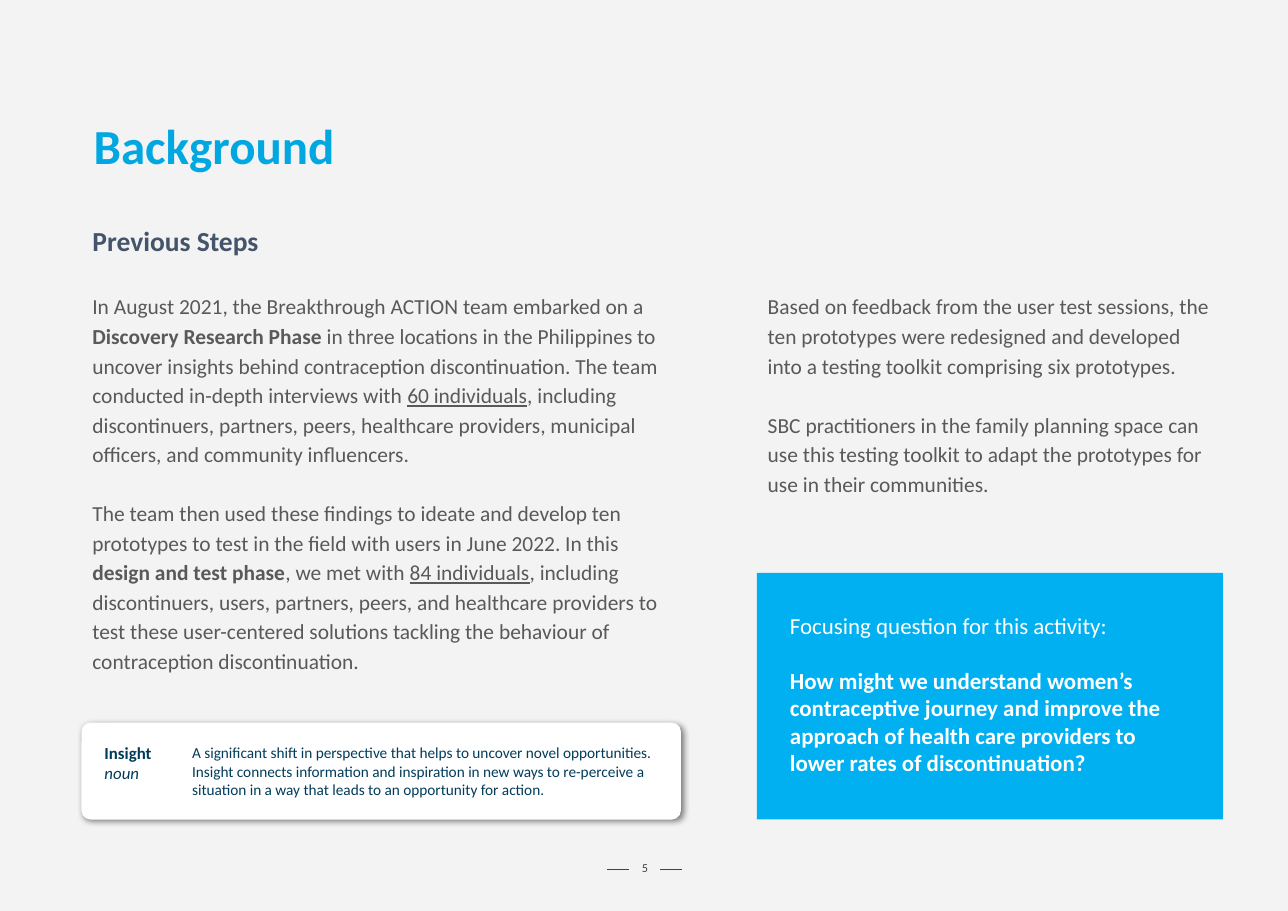
from lxml import etree
from pptx import Presentation
from pptx.dml.color import RGBColor
from pptx.enum.shapes import MSO_CONNECTOR, MSO_SHAPE
from pptx.enum.text import MSO_ANCHOR, PP_ALIGN
from pptx.oxml import parse_xml
from pptx.oxml.ns import nsdecls, qn
from pptx.util import Inches, Pt

LINE = MSO_CONNECTOR.STRAIGHT
RECT, ROUND = MSO_SHAPE.RECTANGLE, MSO_SHAPE.ROUNDED_RECTANGLE
TOP, MID = MSO_ANCHOR.TOP, MSO_ANCHOR.MIDDLE
LEFT, MIDDLE = PP_ALIGN.LEFT, PP_ALIGN.CENTER

COLORS = {
    "back": "F3F3F3", "title": "00A7E1", "head": "44546A", "body": "595959",
    "card": "FFFFFF", "navy": "023C5A", "term": "003C5A",
    "panel": "00B0F0", "white": "FFFFFF", "foot": "434343",
}
WIDE, HIGH = 11.69, 8.27
# Two columns (left, width) and the shared row edges, in inches
COL1, COL2 = (0.74, 5.44), (6.87, 4.23)
BODY, BASE = 2.53, 7.44


def color(name):
    return RGBColor.from_string(COLORS[name])


def write(shape, paras, size, ink, pad=(0.1, 0.1, 0.1, 0.1), anchor=TOP,
          align=LEFT, lines=None, gap=0):
    """Fill a shape with paragraphs, each a list of (text, style letters b, i, u)."""
    frame = shape.text_frame
    frame.word_wrap = True
    frame.vertical_anchor = anchor
    (frame.margin_left, frame.margin_top,
     frame.margin_right, frame.margin_bottom) = map(Inches, pad)
    for n, parts in enumerate(paras):
        para = frame.add_paragraph() if n else frame.paragraphs[0]
        para.alignment = align
        para.line_spacing = lines
        if n and gap:
            para.space_before = Pt(gap)
        for text, style in parts:
            run = para.add_run()
            run.text = text
            font = run.font
            font.name, font.size = "Calibri", Pt(size)
            font.color.rgb = color(ink)
            font.bold, font.italic = "b" in style, "i" in style
            font.underline = "u" in style


deck = Presentation()
deck.slide_width, deck.slide_height = Inches(WIDE), Inches(HIGH)
slide = deck.slides.add_slide(deck.slide_layouts[6])
slide.background.fill.solid()
slide.background.fill.fore_color.rgb = color("back")
shapes = slide.shapes

# Page number between two short rules
foot = shapes.add_textbox(*map(Inches, (5.68, 7.76, 0.35, 0.26)))
write(foot, [[("5", "")]], 8, "foot", anchor=MID, align=MIDDLE, lines=0.8)
for x in (5.51, 5.99):
    rule = shapes.add_connector(LINE, *map(Inches, (x, 7.89, x + 0.2, 7.89)))
    rule.line.color.rgb = color("foot")
    rule.line.width = Pt(0.75)
    etree.SubElement(rule._element.spPr, qn("a:effectLst"))

# Headings
title = shapes.add_textbox(*map(Inches, (COL1[0], 0.83, 10.21, 1.06)))
write(title, [[("Background", "b")]], 32, "title",
      pad=(0.11, 0.06, 0.11, 0.06), anchor=MID, lines=0.86)
head = shapes.add_textbox(*map(Inches, (COL1[0], 1.93, 5.38, 0.52)))
write(head, [[("Previous Steps", "b")]], 18, "head")

# Body columns
steps = [
    [("In August 2021, the Breakthrough ACTION team embarked on a ", ""),
     ("Discovery Research Phase", "b"),
     (" in three locations in the Philippines to uncover insights behind "
      "contraception discontinuation. The team conducted in-depth interviews with ", ""),
     ("60 individuals", "u"),
     (", including discontinuers, partners, peers, healthcare providers, "
      "municipal officers, and community influencers.", "")],
    [("The team then used these findings to ideate and develop ten prototypes "
      "to test in the field with users in June 2022. In this ", ""),
     ("design and test phase", "b"),
     (", we met with ", ""),
     ("84 individuals", "u"),
     (", including discontinuers, users, partners, peers, and healthcare "
      "providers to test these user-centered solutions tackling the behaviour "
      "of contraception discontinuation.", "")],
]
uses = [
    [("Based on feedback from the user test sessions, the ten prototypes were "
      "redesigned and developed into a testing toolkit comprising six prototypes.", "")],
    [("SBC practitioners in the family planning space can use this testing "
      "toolkit to adapt the prototypes for use in their communities.", "")],
]
for (x, w), h, paras in ((COL1, BASE - BODY, steps), (COL2, 2.32, uses)):
    box = shapes.add_textbox(*map(Inches, (x, BODY, w, h)))
    write(box, paras, 14, "body", lines=1.15, gap=19.4)

# Definition card and question panel share the bottom edge
cards = []
for kind, (x, w), h, fill in ((ROUND, COL1, 0.88, "card"), (RECT, COL2, 2.24, "panel")):
    card = shapes.add_shape(kind, *map(Inches, (x, BASE - h, w, h)))
    card.fill.solid()
    card.fill.fore_color.rgb = color(fill)
    card.line.fill.background()
    card.shadow.inherit = False
    cards.append(card)
note, panel = cards

note.adjustments[0] = 0.093
note._element.spPr.find(qn("a:effectLst")).append(parse_xml(
    f'<a:outerShdw {nsdecls("a")} blurRad="{Pt(4.5)}" dist="{Pt(1.5)}" '
    f'dir="{44 * 60000}" algn="bl" rotWithShape="0"><a:srgbClr val="000000">'
    '<a:alpha val="49000"/></a:srgbClr></a:outerShdw>'))
write(note, [[("A significant shift in perspective that helps to uncover novel "
               "opportunities. Insight connects information and inspiration in new "
               "ways to re-perceive a situation in a way that leads to an "
               "opportunity for action.", "")]],
      10, "navy", pad=(0.98, 0.1, 0.1, 0.1), anchor=MID)
term = shapes.add_textbox(*map(Inches, (0.85, 6.64, 0.97, 0.57)))
write(term, [[("Insight", "b")], [("noun", "i")]], 11, "term")

write(panel, [[("Focusing question for this activity:", "")],
              [("How might we understand women’s contraceptive journey and improve "
                "the approach of health care providers to lower rates of "
                "discontinuation?", "b")]],
      15, "white", pad=(0.3, 0.35, 0.3, 0.35), gap=18)

deck.save("out.pptx")
